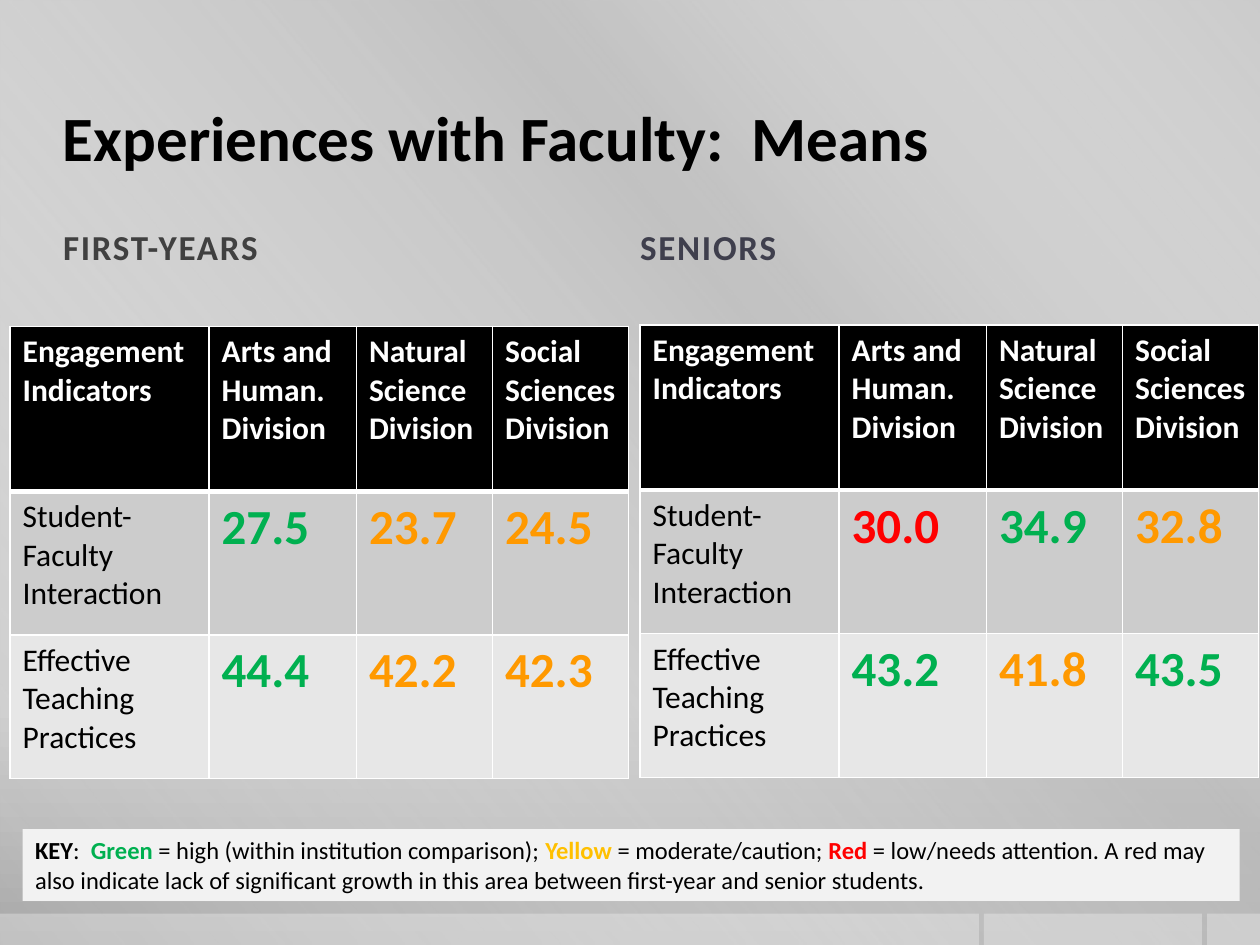
from dataclasses import dataclass

from lxml import etree
from pptx import Presentation
from pptx import util as u
from pptx.dml.color import RGBColor
from pptx.enum import shapes, text
from pptx.oxml import parse_xml
from pptx.oxml.ns import nsdecls, qn


@dataclass(frozen=True)
class Theme:
    font: str = "Calibri"
    title_size: int = 36
    heading_size: int = 20
    cell_size: int = 18
    value_size: int = 28
    key_size: int = 14
    black: str = "000000"
    white: str = "FFFFFF"
    green: str = "00B050"
    orange: str = "FF9900"
    yellow: str = "FFC000"
    red: str = "FF0000"
    first_year: str = "404040"
    senior: str = "3F3F4D"
    key_fill: str = "F2F2F2"
    row_fills: tuple = ("000000", "CCCCCC", "E7E7E7")
    # Gradient stops: position %, colour, opacity %
    background: tuple = ((0, "CBCBCB", 100), (76, "C8C8C8", 100), (100, "A7A7A7", 100))
    sheen: tuple = ((0, "FFFFFF", 0), (34, "BFBFBF", 61),
                    (38, "BFBFBF", 76), (100, "FFFFFF", 0))


THEME = Theme()


def write_run(paragraph, content, *, size, color, bold=False, spacing=0):
    """Add one formatted run to a paragraph."""
    run = paragraph.add_run()
    run.text = content
    run.font.name = THEME.font
    run.font.size = u.Pt(size)
    run.font.bold = bold
    run.font.color.rgb = RGBColor.from_string(color)
    if spacing:
        run.font._element.set("spc", str(spacing * 100))


def set_gradient(properties, stops, angle):
    """Replace the solid fill inside a properties element by a gradient."""
    stop_xml = "".join(
        f'<a:gs pos="{position * 1000}"><a:srgbClr val="{color}">'
        f'<a:alpha val="{opacity * 1000}"/></a:srgbClr></a:gs>'
        for position, color, opacity in stops)
    gradient = parse_xml(
        f'<a:gradFill {nsdecls("a")} rotWithShape="1"><a:gsLst>{stop_xml}</a:gsLst>'
        f'<a:lin ang="{angle * 60000}" scaled="0"/></a:gradFill>')
    properties.replace(properties.find(qn("a:solidFill")), gradient)


class SlideBuilder:
    def __init__(self, slide, theme):
        self.slide = slide
        self.theme = theme

    def background(self):
        self.slide.background.fill.solid()
        properties = self.slide._element.cSld.find(qn("p:bg")).find(qn("p:bgPr"))
        set_gradient(properties, self.theme.background, 90)

    def rectangle(self, left, top, width, height, color, opacity=100):
        shape = self.slide.shapes.add_shape(
            shapes.MSO_SHAPE.RECTANGLE, u.Inches(left), u.Inches(top),
            u.Inches(width), u.Inches(height))
        shape.shadow.inherit = False
        shape.line.fill.background()
        shape.fill.solid()
        shape.fill.fore_color.rgb = RGBColor.from_string(color)
        if opacity < 100:
            color_element = shape._element.spPr.find(qn("a:solidFill"))[0]
            etree.SubElement(color_element, qn("a:alpha")).set("val", str(opacity * 1000))
        return shape

    def label(self, left, top, width, height, content, anchor, **run_format):
        box = self.slide.shapes.add_textbox(
            u.Inches(left), u.Inches(top), u.Inches(width), u.Inches(height))
        frame = box.text_frame
        frame.word_wrap = True
        frame.vertical_anchor = anchor
        frame.margin_left = frame.margin_right = 0
        write_run(frame.paragraphs[0], content, bold=True, **run_format)

    def cell(self, cell, lines, fill, bottom_width, **run_format):
        cell.fill.solid()
        cell.fill.fore_color.rgb = RGBColor.from_string(fill)
        widths = {"lnL": 1, "lnR": 1, "lnT": 1, "lnB": bottom_width}
        for index, (side, width) in enumerate(widths.items()):
            cell._tc.tcPr.insert(index, parse_xml(
                f'<a:{side} {nsdecls("a")} w="{u.Pt(width)}"><a:solidFill>'
                f'<a:srgbClr val="{self.theme.white}"/></a:solidFill></a:{side}>'))
        frame = cell.text_frame
        for index, line in enumerate(lines):
            paragraph = frame.add_paragraph() if index else frame.paragraphs[0]
            write_run(paragraph, line, **run_format)

    def means_table(self, left, top, values):
        theme = self.theme
        headers = (["Engagement Indicators"], ["Arts and Human. Division"],
                   ["Natural Science", "Division"], ["Social Sciences Division"])
        indicators = (["Student-Faculty", "Interaction"], ["Effective Teaching Practices"])
        column_widths, row_heights = (1.58, 1.17, 1.08, 1.08), (1.31, 1.14, 1.14)
        table = self.slide.shapes.add_table(
            len(row_heights), len(column_widths), u.Inches(left), u.Inches(top),
            u.Inches(sum(column_widths)), u.Inches(sum(row_heights))).table
        for column, width in zip(table.columns, column_widths):
            column.width = u.Inches(width)
        for row, height in zip(table.rows, row_heights):
            row.height = u.Inches(height)

        # Header row
        for column, lines in enumerate(headers):
            self.cell(table.cell(0, column), lines, theme.row_fills[0], 3,
                      size=theme.cell_size, color=theme.white, bold=True)
        # One row per indicator, values coloured by rating
        for row, (lines, row_values) in enumerate(zip(indicators, values), start=1):
            fill = theme.row_fills[row]
            self.cell(table.cell(row, 0), lines, fill, 1,
                      size=theme.cell_size, color=theme.black)
            for column, (value, color) in enumerate(row_values, start=1):
                self.cell(table.cell(row, column), [value], fill, 1,
                          size=theme.value_size, color=color, bold=True)

    def key(self, left, top, width, height, parts):
        frame = self.rectangle(left, top, width, height, self.theme.key_fill).text_frame
        frame.word_wrap = True
        frame.vertical_anchor = text.MSO_ANCHOR.TOP
        paragraph = frame.paragraphs[0]
        paragraph.alignment = text.PP_ALIGN.LEFT
        for content, color, bold in parts:
            write_run(paragraph, content, size=self.theme.key_size, color=color, bold=bold)


def main():
    presentation = Presentation()
    presentation.slide_width, presentation.slide_height = u.Inches(10), u.Inches(7.5)
    slide = presentation.slides.add_slide(presentation.slide_layouts[6])
    builder = SlideBuilder(slide, THEME)
    black, green, orange, red = THEME.black, THEME.green, THEME.orange, THEME.red

    # Backdrop and footer strips
    builder.background()
    sheen = builder.rectangle(0, 0, 10, 7.5, THEME.white)
    set_gradient(sheen._element.spPr, THEME.sheen, 140)
    for left, width in ((9.58, 0.42), (7.81, 1.73), (0, 7.77)):
        builder.rectangle(left, 7.25, width, 0.25, THEME.white, opacity=30)

    # Title and column headings
    builder.label(0.5, 0.58, 9, 1, "Experiences with Faculty:  Means",
                  text.MSO_ANCHOR.MIDDLE, size=THEME.title_size, color=black)
    for left, heading, color in ((0.5, "FIRST-YEARS", THEME.first_year),
                                 (5.08, "SENIORS", THEME.senior)):
        builder.label(left, 1.72, 4.42, 0.45, heading, text.MSO_ANCHOR.BOTTOM,
                      size=THEME.heading_size, color=color, spacing=1)

    # Tables of means
    builder.means_table(0.08, 2.59, (
        (("27.5", green), ("23.7", orange), ("24.5", orange)),
        (("44.4", green), ("42.2", orange), ("42.3", orange))))
    builder.means_table(5.08, 2.58, (
        (("30.0", red), ("34.9", green), ("32.8", orange)),
        (("43.2", green), ("41.8", orange), ("43.5", green))))

    # Colour key
    builder.key(0.18, 6.58, 9.66, 0.57, (
        ("KEY", black, True),
        (":  ", black, False),
        ("Green ", green, True),
        ("= high (within institution comparison); ", black, False),
        ("Yellow", THEME.yellow, True),
        (" = moderate/caution; ", black, False),
        ("Red", red, True),
        (" = low/needs attention. A red may also indicate lack of significant growth "
         "in this area between first-year and senior students.", black, False)))

    presentation.save("out.pptx")


if __name__ == "__main__":
    main()
